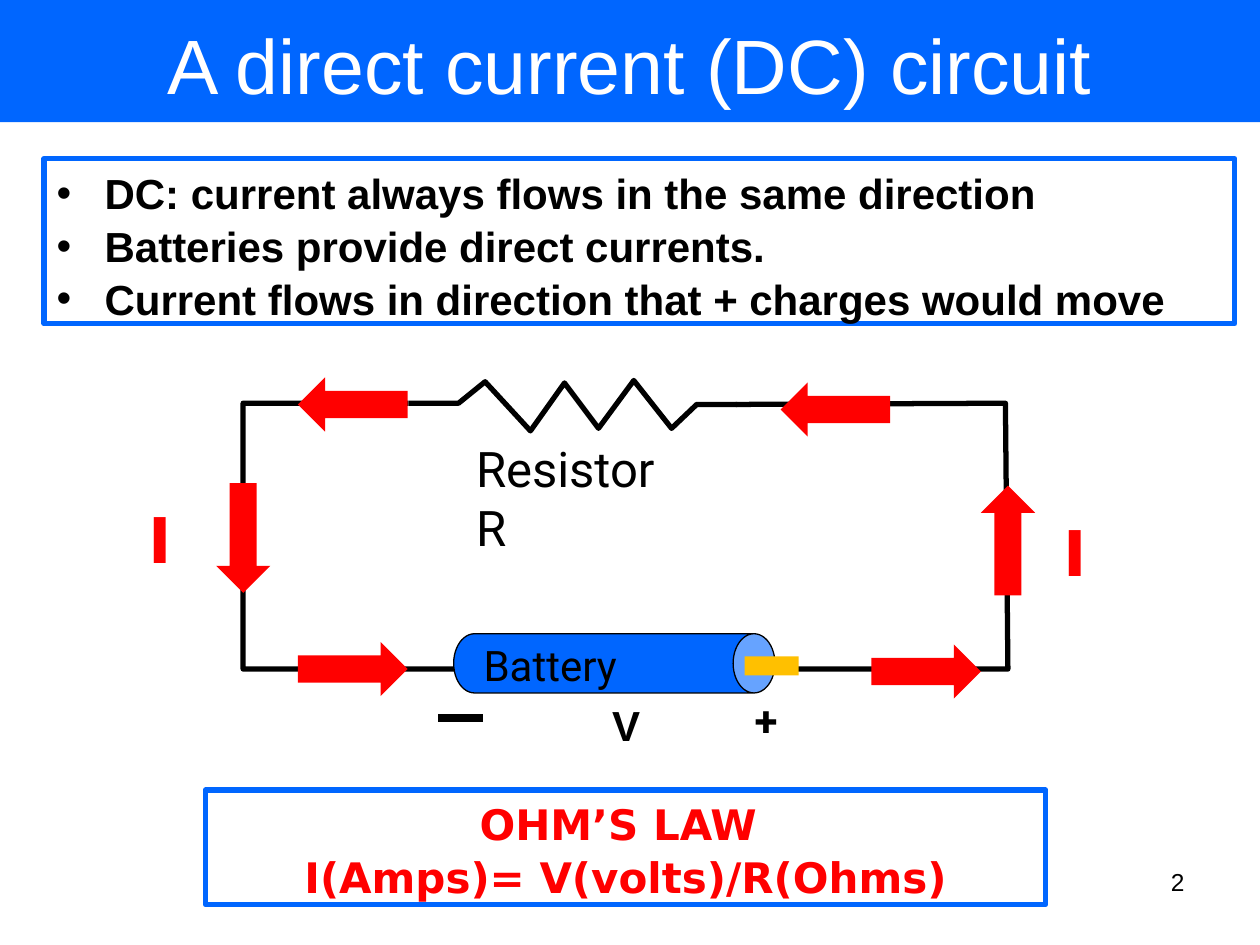
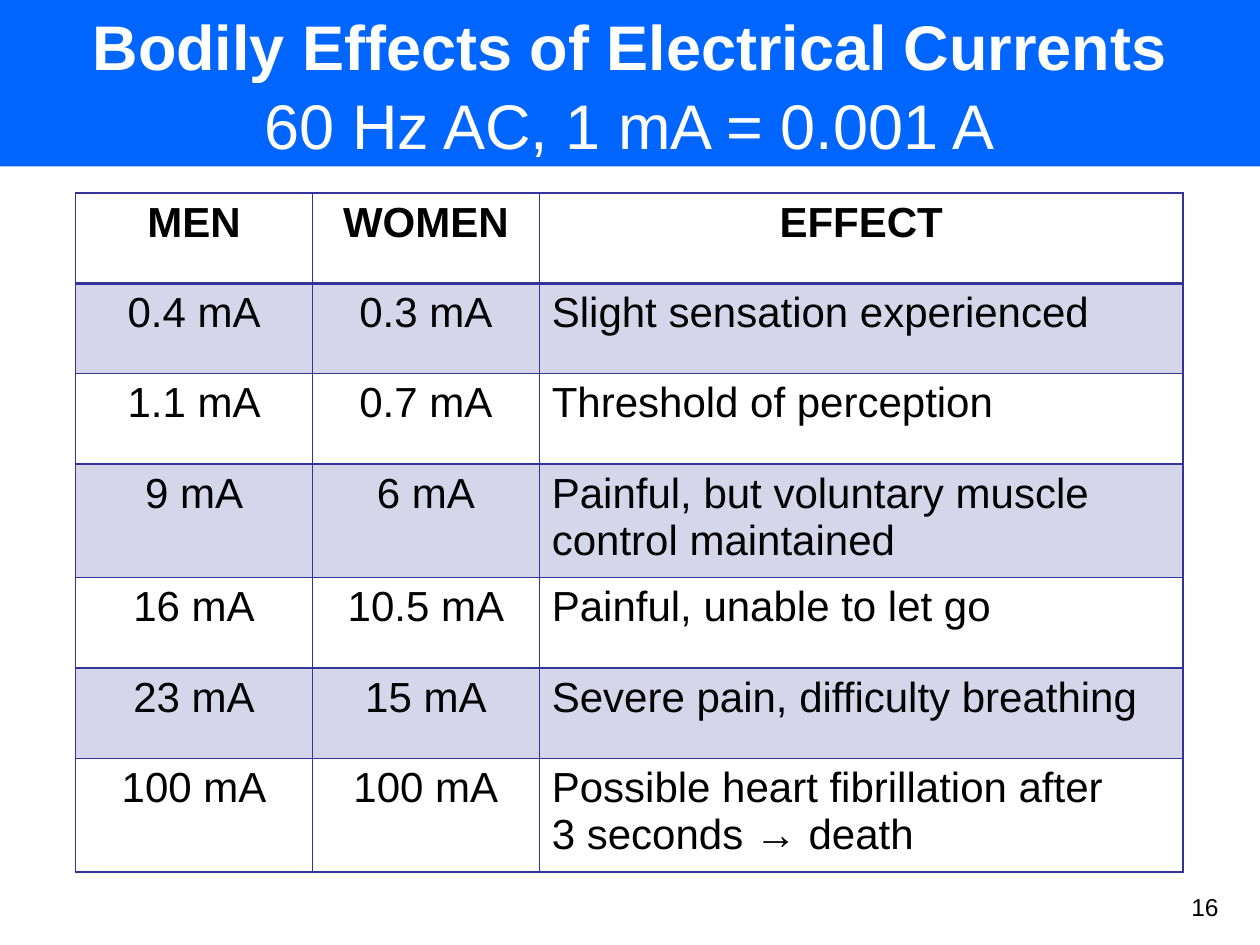
from dataclasses import dataclass, replace
from typing import NamedTuple

from lxml.etree import SubElement
from pptx import Presentation
from pptx.dml.color import RGBColor
from pptx.enum.shapes import MSO_CONNECTOR as Connector, MSO_SHAPE as Shape
from pptx.enum.text import MSO_ANCHOR as Anchor, MSO_AUTO_SIZE as AutoSize, PP_ALIGN as Align
from pptx.oxml.ns import qn
from pptx.util import Inches, Pt

COLUMNS, ROWS = 100, 75


@dataclass(frozen=True)
class Style:
    size: float
    font: str = "Arial"
    color: str = "000000"
    bold: bool = False


@dataclass(frozen=True)
class Theme:
    blue: str = "0066FF"
    white: str = "FFFFFF"
    black: str = "000000"
    red: str = "FF0000"
    gold: str = "FFC000"
    grid: str = "333399"
    band: str = "D6D6EB"
    leading: float = 1.05
    heavy: float = 3
    title: Style = Style(44, color="FFFFFF")
    subtitle: Style = Style(36, color="FFFFFF")
    body: Style = Style(24)
    strong: Style = Style(24, bold=True)
    law: Style = Style(24, "DejaVu Sans", "FF0000", True)
    current: Style = Style(36, "DejaVu Sans", "FF0000", True)
    resistor: Style = Style(28, "Roboto")
    battery: Style = Style(24, "Roboto")
    pole: Style = Style(24, "Roboto", bold=True)
    number: Style = Style(14)


class Box(NamedTuple):
    left: float
    top: float
    width: float
    height: float


class Label(NamedTuple):
    text: str
    box: Box
    style: Style


class Arrow(NamedTuple):
    x: float
    y: float
    rotation: int


T = Theme()
prs = Presentation()
prs.slide_width, prs.slide_height = Inches(10), Inches(7.5)


def col(n: float) -> int:
    return round(prs.slide_width * n / COLUMNS)


def row(n: float) -> int:
    return round(prs.slide_height * n / ROWS)


def place(box: Box) -> tuple:
    return col(box.left), row(box.top), col(box.width), row(box.height)


def rgb(color: str) -> RGBColor:
    return RGBColor.from_string(color)


def add_run(p, text: str, style: Style) -> None:
    r = p.add_run()
    r.text = text
    r.font.size, r.font.name, r.font.bold = Pt(style.size), style.font, style.bold
    r.font.color.rgb = rgb(style.color)


def write(tf, lines: list[str], style: Style, align=Align.LEFT, leading: float = T.leading) -> None:
    for i, line in enumerate(lines):
        p = tf.paragraphs[0] if i == 0 else tf.add_paragraph()
        p.alignment, p.line_spacing, p.space_before = align, leading, Pt(0)
        add_run(p, line, style)


def paint(sp, fill: str | None = None, line: str | None = None, width: float = T.heavy) -> None:
    if fill:
        sp.fill.solid()
        sp.fill.fore_color.rgb = rgb(fill)
    else:
        sp.fill.background()
    if line:
        sp.line.color.rgb = rgb(line)
        sp.line.width = Pt(width)
    else:
        sp.line.fill.background()


def add_shape(slide, kind, box: Box, fill: str | None, line: str | None = None,
              width: float = T.heavy, rotation: int = 0):
    sp = slide.shapes.add_shape(kind, *place(box))
    sp.shadow.inherit = False
    sp.rotation = rotation
    paint(sp, fill, line, width)
    return sp


def add_label(slide, label: Label, align=Align.LEFT) -> None:
    tf = slide.shapes.add_textbox(*place(label.box)).text_frame
    tf.word_wrap = True
    write(tf, label.text.split("\n"), label.style, align, 1)


def add_wire(slide, points: list[tuple[float, float]]) -> None:
    (x, y), *rest = points
    builder = slide.shapes.build_freeform(col(x), row(y))
    builder.add_line_segments([(col(x), row(y)) for x, y in rest], close=False)
    sp = builder.convert_to_shape()
    sp.shadow.inherit = False
    paint(sp, None, T.black)


def add_slide(layout: int, band: float, title: list[tuple[str, Style]], number: Label):
    slide = prs.slides.add_slide(prs.slide_layouts[layout])
    sp = slide.shapes.title
    sp.left, sp.top, sp.width, sp.height = place(Box(0, 0, COLUMNS, band))
    paint(sp, T.blue)
    tf = sp.text_frame
    tf.auto_size, tf.vertical_anchor, tf.word_wrap = AutoSize.NONE, Anchor.MIDDLE, True
    tf.margin_top = tf.margin_bottom = 0
    p = tf.paragraphs[0]
    p.alignment, p.line_spacing = Align.CENTER, T.leading
    for i, (text, style) in enumerate(title):
        if i:
            p.add_line_break()
        add_run(p, text, style)
    add_label(slide, number, Align.RIGHT)
    return slide


def add_bullets(slide, box: Box, lines: list[str]) -> None:
    sp = slide.placeholders[1]
    sp.left, sp.top, sp.width, sp.height = place(box)
    paint(sp, T.white, T.blue)
    tf = sp.text_frame
    tf.auto_size, tf.word_wrap = AutoSize.NONE, True
    write(tf, lines, T.strong)
    indent = Inches(0.38)
    for p in tf.paragraphs:
        pPr = p._p.get_or_add_pPr()
        pPr.set("marL", str(indent))
        pPr.set("indent", str(-indent))


def set_border(cell, side: str, width: float) -> None:
    ln = SubElement(cell._tc.get_or_add_tcPr(), qn(f"a:ln{side}"), w=str(Pt(width)))
    fill = SubElement(ln, qn("a:solidFill"))
    SubElement(fill, qn("a:srgbClr"), val=T.grid)


def add_effects_table(slide, box: Box, widths: list[float], heights: list[float],
                      records: list[tuple[str, str, str]]) -> None:
    table = slide.shapes.add_table(len(records), len(widths), *place(box)).table
    table.first_row = table.horz_banding = False
    for column, width in zip(table.columns, widths):
        column.width = col(width)
    for i, (record, height) in enumerate(zip(records, heights)):
        table.rows[i].height = row(height)
        for j, text in enumerate(record):
            cell = table.cell(i, j)
            align = Align.LEFT if i and j == 2 else Align.CENTER
            write(cell.text_frame, text.split("\n"), T.body if i else T.strong, align, 1)
            for side in "LRTB":
                header_rule = (i, side) in ((0, "B"), (1, "T"))
                set_border(cell, side, 2 if header_rule else 1)
            if i % 2:
                cell.fill.solid()
                cell.fill.fore_color.rgb = rgb(T.band)
            else:
                cell.fill.background()


def build_circuit() -> None:
    slide = add_slide(1, 9.7, [("A direct current (DC) circuit", T.title)],
                      Label("2", Box(71.7, 68.3, 23.3, 5.2), T.number))
    add_bullets(slide, Box(3.5, 12.6, 94.5, 13.1), [
        "DC: current always flows in the same direction",
        "Batteries provide direct currents.",
        "Current flows in direction that + charges would move",
    ])
    law = add_shape(slide, Shape.RECTANGLE, Box(16.3, 62.7, 66.7, 9.1), None, T.blue)
    law.text_frame.vertical_anchor = Anchor.TOP
    write(law.text_frame, ["OHM’S LAW ", "I(Amps)= V(volts)/R(Ohms)"], T.law, Align.CENTER)

    add_wire(slide, [(32.4, 32), (36.4, 32), (38.5, 30.3), (42.1, 34.2), (44.8, 30.4),
                     (47.5, 34), (50.3, 30.2), (53.3, 34), (55.3, 32.1), (58.5, 32.1)])
    add_wire(slide, [(32.4, 32), (19.3, 32), (19.3, 53.1), (80, 53.1), (79.8, 32), (58.4, 32.1)])

    battery = add_shape(slide, Shape.CAN, Box(46.4, 39.9, 4.7, 25.5), T.blue, T.black, 0.75, 90)
    battery.adjustments[0] = 0.706
    add_shape(slide, Shape.RECTANGLE, Box(59.1, 52.1, 4.3, 1.5), T.gold)

    minus = slide.shapes.add_connector(Connector.STRAIGHT, col(34.8), row(57), col(38.3), row(57))
    minus.line.color.rgb = rgb(T.black)
    minus.line.width = Pt(4.5)
    SubElement(minus._element.spPr, qn("a:effectLst"))

    for label in (
        Label("I", Box(10.8, 39.2, 3.4, 7.1), T.current),
        Label("I", Box(83.4, 40.3, 6.8, 7.1), T.current),
        Label("V", Box(47.6, 55, 4.2, 5), T.strong),
        Label("Resistor\nR", Box(36.8, 34.3, 19.4, 10.4), T.resistor),
        Label("Battery", Box(37.4, 50.3, 17.7, 5), T.battery),
        Label("+", Box(58.9, 54.6, 6, 5), T.pole),
    ):
        add_label(slide, label)

    width, length = 4.3, 8.7
    for arrow in (Arrow(80, 42.9, 0), Arrow(19.3, 42.7, 180), Arrow(66.3, 32.5, 270),
                  Arrow(28, 32.1, 270), Arrow(28, 53.1, 90), Arrow(73.5, 53.3, 90)):
        box = Box(arrow.x - width / 2, arrow.y - length / 2, width, length)
        add_shape(slide, Shape.UP_ARROW, box, T.red, rotation=arrow.rotation)


def build_effects() -> None:
    slide = add_slide(5, 13.2, [
        ("Bodily Effects of Electrical Currents", replace(T.subtitle, bold=True)),
        ("60 Hz AC, 1 mA = 0.001 A", T.subtitle),
    ], Label("16", Box(89.2, 70.3, 8.5, 3.3), T.number))
    records = [
        ("MEN", "WOMEN", "EFFECT"),
        ("0.4 mA", "0.3 mA", "Slight sensation experienced"),
        ("1.1 mA", "0.7 mA", "Threshold of perception"),
        ("9 mA", "6 mA", "Painful, but voluntary muscle\ncontrol maintained"),
        ("16 mA", "10.5 mA", "Painful, unable to let go"),
        ("23 mA", "15 mA", "Severe pain, difficulty breathing"),
        ("100 mA", "100 mA", "Possible heart fibrillation after\n3 seconds → death"),
    ]
    heights = [9 if "\n" in effect else 7.18 for _, _, effect in records]
    add_effects_table(slide, Box(6, 15.3, 87.9, 53.9), [18.8, 18, 51.1], heights, records)


def main() -> None:
    build_circuit()
    build_effects()
    prs.save("out.pptx")


if __name__ == "__main__":
    main()
